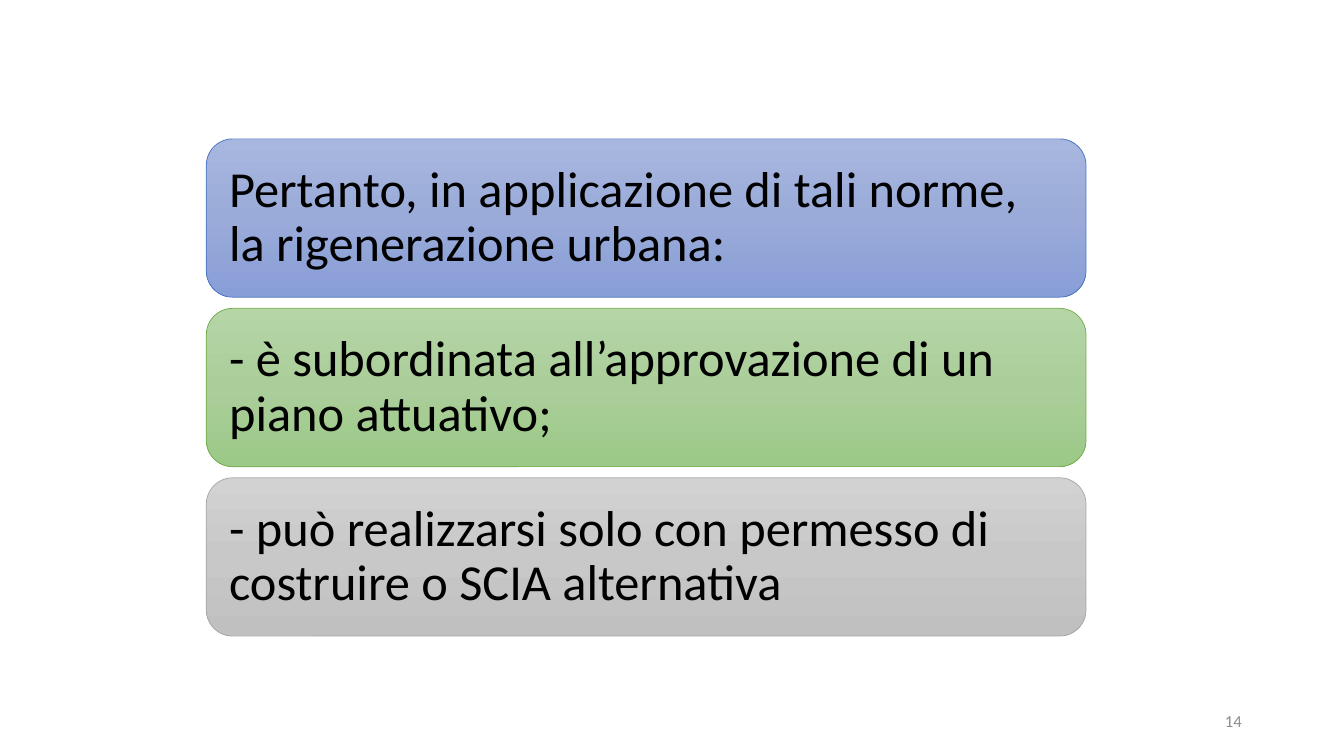
from copy import deepcopy
from dataclasses import dataclass

from pptx import Presentation
from pptx import util as u
from pptx.dml.color import RGBColor
from pptx.enum import shapes, text
from pptx.oxml.ns import qn

FONT = "Calibri"
PANEL_LEFT, PANEL_TOP = 5.2, 3.5
PANEL_WIDTH, PANEL_HEIGHT = 22.17, 3.99
PANEL_PITCH = 4.27
PANEL_INSET = 0.38


@dataclass(frozen=True)
class Panel:
    wording: str
    gradient: tuple[str, str, str]
    outline: str


PANELS = [
    Panel(
        "Pertanto, in applicazione di tali norme, la rigenerazione urbana:",
        ("A8B7DF", "9AABD9", "889ED7"),
        "4472C4",
    ),
    Panel(
        "- è subordinata all’approvazione di un piano attuativo;",
        ("B5D5A7", "AACE9A", "9CC987"),
        "70AD47",
    ),
    Panel(
        "- può realizzarsi solo con permesso di costruire o SCIA alternativa",
        ("D2D2D2", "C8C8C8", "C0C0C0"),
        "A5A5A5",
    ),
]


def color(value: str) -> RGBColor:
    return RGBColor.from_string(value)


def write(shape, wording: str, size: int, ink: str, alignment):
    frame = shape.text_frame
    frame.text = wording
    frame.word_wrap = True
    frame.vertical_anchor = text.MSO_ANCHOR.MIDDLE
    paragraph = frame.paragraphs[0]
    paragraph.alignment = alignment
    font = paragraph.runs[0].font
    font.name = FONT
    font.size = u.Pt(size)
    font.color.rgb = color(ink)
    return frame


def fill_gradient(shape, colors: tuple[str, str, str]) -> None:
    shape.fill.gradient()
    shape.fill.gradient_angle = 270
    stop_list = shape._element.spPr.find(qn("a:gradFill")).find(qn("a:gsLst"))
    stop_list.insert(1, deepcopy(stop_list[0]))
    for index, (stop, value) in enumerate(zip(shape.fill.gradient_stops, colors)):
        stop.position = index / 2
        stop.color.rgb = color(value)


def draw_panel(slide, panel: Panel, index: int) -> None:
    shape = slide.shapes.add_shape(
        shapes.MSO_SHAPE.ROUNDED_RECTANGLE,
        u.Cm(PANEL_LEFT),
        u.Cm(PANEL_TOP + index * PANEL_PITCH),
        u.Cm(PANEL_WIDTH),
        u.Cm(PANEL_HEIGHT),
    )
    shape.shadow.inherit = False
    fill_gradient(shape, panel.gradient)
    shape.line.color.rgb = color(panel.outline)
    shape.line.width = u.Pt(0.5)
    frame = write(shape, panel.wording, 36, "000000", text.PP_ALIGN.LEFT)
    frame.margin_left = frame.margin_right = u.Cm(PANEL_INSET)
    frame.margin_top = frame.margin_bottom = u.Cm(PANEL_INSET)
    frame.paragraphs[0].line_spacing = 0.9


def draw_page_number(slide, number: int) -> None:
    box = slide.shapes.add_textbox(u.Cm(23.93), u.Cm(17.65), u.Cm(7.62), u.Cm(1.02))
    write(box, str(number), 12, "8C8C8C", text.PP_ALIGN.RIGHT)


def main() -> None:
    presentation = Presentation()
    presentation.slide_width = u.Cm(33.87)
    presentation.slide_height = u.Cm(19.05)
    slide = presentation.slides.add_slide(presentation.slide_layouts[6])
    for index, panel in enumerate(PANELS):
        draw_panel(slide, panel, index)
    draw_page_number(slide, 14)
    presentation.save("out.pptx")


if __name__ == "__main__":
    main()
